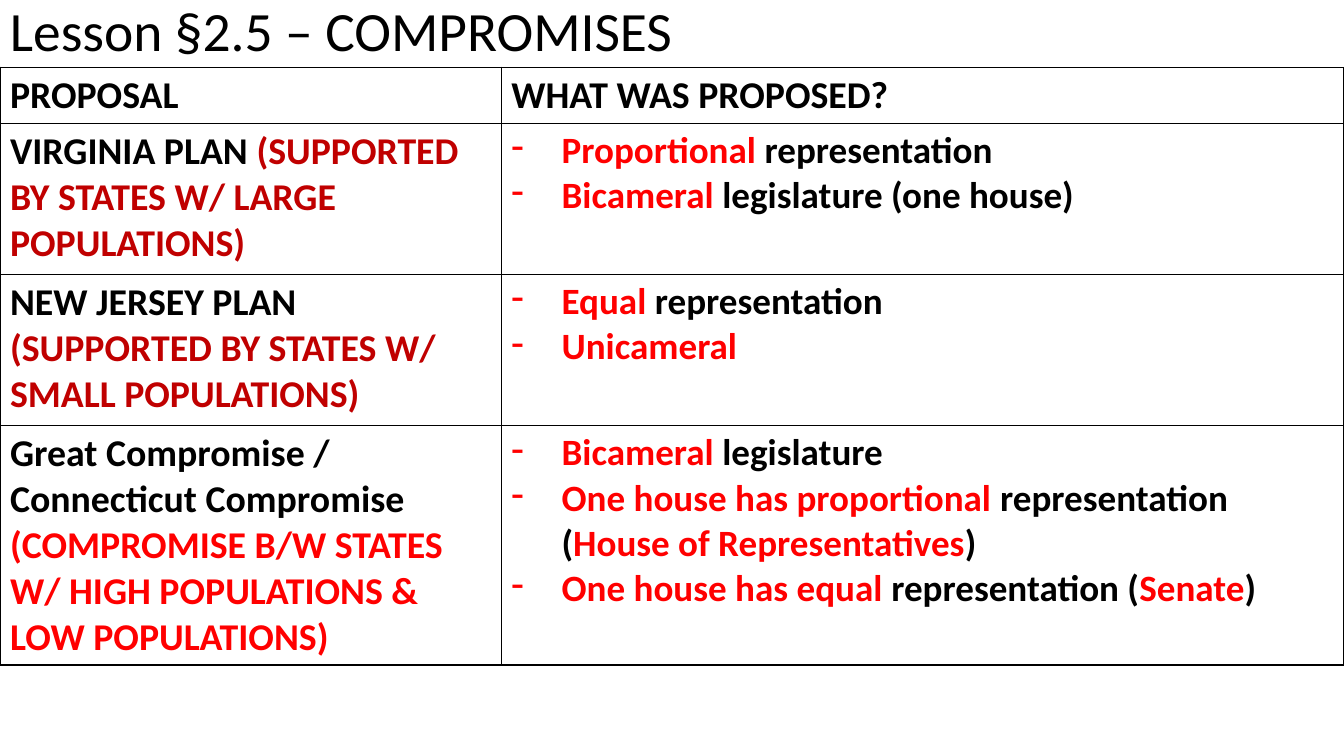
from lxml import etree
from pptx import Presentation
from pptx.dml.color import RGBColor
from pptx.enum.text import MSO_ANCHOR
from pptx.oxml.ns import qn
from pptx.util import Pt

MIDDLE = MSO_ANCHOR.MIDDLE
BLACK = RGBColor(0, 0, 0)
RED = RGBColor(255, 0, 0)
DARK_RED = RGBColor(192, 0, 0)

PAGE_WIDTH, PAGE_HEIGHT = 960, 540
TITLE_HEIGHT = 48
COLUMN_WIDTHS = (358, 602)
ROW_HEIGHTS = (40, 108, 108, 171)
HANGING_INDENT = 36

TITLE_FORMAT = {"name": "Calibri", "size": Pt(39.6), "bold": False}
PLAN_FORMAT = {"name": "Calibri", "size": Pt(27), "bold": True}
POINT_FORMAT = {"name": "Calibri", "size": Pt(26.5), "bold": True}

HEADINGS = ("PROPOSAL", "WHAT WAS PROPOSED?")
PLANS = (
    (
        [[("VIRGINIA PLAN ", BLACK),
          ("(SUPPORTED BY STATES W/ LARGE POPULATIONS)", DARK_RED)]],
        [[("Proportional", RED), (" representation", BLACK)],
         [("Bicameral", RED), (" legislature (one house)", BLACK)]],
    ),
    (
        [[("NEW JERSEY PLAN ", BLACK),
          ("(SUPPORTED BY STATES W/ SMALL POPULATIONS)", DARK_RED)]],
        [[("Equal", RED), (" representation", BLACK)],
         [("Unicameral", RED)]],
    ),
    (
        [[("Great Compromise / Connecticut Compromise", BLACK)],
         [("(COMPROMISE B/W STATES W/ HIGH POPULATIONS & LOW POPULATIONS)", RED)]],
        [[("Bicameral", RED), (" legislature", BLACK)],
         [("One house has proportional", RED), (" representation (", BLACK),
          ("House of Representatives", RED), (")", BLACK)],
         [("One house has equal ", RED), ("representation (", BLACK),
          ("Senate", RED), (")", BLACK)]],
    ),
)


def add_dash(para):
    """Give a paragraph a hanging dash bullet."""
    properties = para._p.get_or_add_pPr()
    properties.set("marL", str(Pt(HANGING_INDENT)))
    properties.set("indent", str(-Pt(HANGING_INDENT)))
    etree.SubElement(properties, qn("a:buFontTx"))
    etree.SubElement(properties, qn("a:buChar"), char="-")


def write_text(frame, lines, text_format, dashed=False):
    """Fill a text frame with paragraphs of coloured spans."""
    for number, spans in enumerate(lines):
        para = frame.add_paragraph() if number else frame.paragraphs[0]
        if dashed:
            add_dash(para)
        for text, color in spans:
            span = para.add_run()
            span.text = text
            for name, value in text_format.items():
                setattr(span.font, name, value)
            span.font.color.rgb = color


def add_borders(cell):
    """Draw a thin black line on every side of a cell."""
    properties = cell._tc.get_or_add_tcPr()
    for position, side in enumerate(("lnL", "lnR", "lnT", "lnB")):
        line = etree.Element(qn(f"a:{side}"), w=str(Pt(1)))
        fill = etree.SubElement(line, qn("a:solidFill"))
        etree.SubElement(fill, qn("a:srgbClr"), val=str(BLACK))
        properties.insert(position, line)


def add_title(page, left, top, width, height):
    """Place the lesson title in the given box."""
    box = page.shapes.add_textbox(Pt(left), Pt(top), Pt(width), Pt(height))
    frame = box.text_frame
    frame.word_wrap = True
    frame.vertical_anchor = MIDDLE
    write_text(frame, [[("Lesson §2.5 – COMPROMISES", BLACK)]], TITLE_FORMAT)
    frame.paragraphs[0].line_spacing = 0.9


def add_plan_table(page, left, top, width, height):
    """Place the table of proposals in the given box."""
    table = page.shapes.add_table(
        len(ROW_HEIGHTS), len(COLUMN_WIDTHS),
        Pt(left), Pt(top), Pt(width), Pt(height)).table
    table.horz_banding = False
    for column, column_width in zip(table.columns, COLUMN_WIDTHS):
        column.width = Pt(column_width)
    for row, row_height in zip(table.rows, ROW_HEIGHTS):
        row.height = Pt(row_height)
    for cell in table.iter_cells():
        cell.fill.background()
        add_borders(cell)
    for number, heading in enumerate(HEADINGS):
        write_text(table.cell(0, number).text_frame, [[(heading, BLACK)]], PLAN_FORMAT)
    for number, (plan, points) in enumerate(PLANS, start=1):
        write_text(table.cell(number, 0).text_frame, plan, PLAN_FORMAT)
        write_text(table.cell(number, 1).text_frame, points, POINT_FORMAT, dashed=True)


def main():
    """Build the lesson slide and save the deck."""
    deck = Presentation()
    deck.slide_width, deck.slide_height = Pt(PAGE_WIDTH), Pt(PAGE_HEIGHT)
    page = deck.slides.add_slide(deck.slide_layouts[6])
    add_title(page, 0, 0, PAGE_WIDTH, TITLE_HEIGHT)
    add_plan_table(page, 0, TITLE_HEIGHT, PAGE_WIDTH, sum(ROW_HEIGHTS))
    deck.save("out.pptx")


if __name__ == "__main__":
    main()
